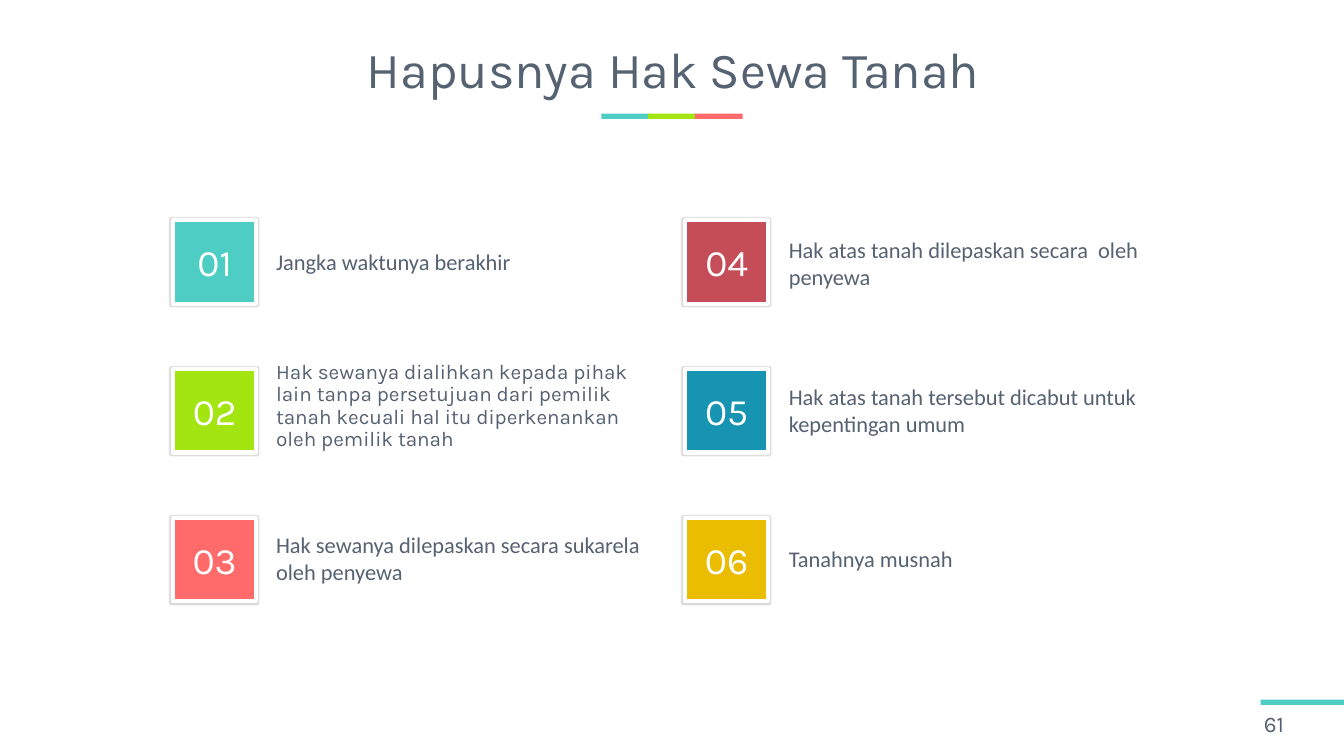
from lxml import etree
from pptx import Presentation
from pptx.dml.color import RGBColor
from pptx.enum import shapes, text
from pptx.oxml import ns
from pptx.util import Inches, Pt

TEAL = RGBColor(0x4E, 0xCD, 0xC4)
LIME = RGBColor(0xA3, 0xE5, 0x11)
CORAL = RGBColor(0xFF, 0x6B, 0x6B)
WINE = RGBColor(0xC5, 0x4D, 0x57)
BLUE = RGBColor(0x16, 0x94, 0xB2)
GOLD = RGBColor(0xEA, 0xBD, 0x00)
SLATE = RGBColor(0x55, 0x62, 0x72)
WHITE = RGBColor(0xFF, 0xFF, 0xFF)

LEFT, CENTER, FULL = text.PP_ALIGN.LEFT, text.PP_ALIGN.CENTER, text.PP_ALIGN.JUSTIFY
TOP, MIDDLE = text.MSO_ANCHOR.TOP, text.MSO_ANCHOR.MIDDLE
SIDE = 1.24
PITCH = 2.215

ITEMS = [
    ("Jangka waktunya berakhir", TEAL, 3.21, 1.37, 0, LEFT),
    ("Hak sewanya dialihkan kepada pihak lain tanpa persetujuan dari pemilik "
     "tanah kecuali hal itu diperkenankan oleh pemilik tanah",
     LIME, 5.33, 1.57, 12, LEFT),
    ("Hak sewanya dilepaskan secara sukarela oleh penyewa", CORAL, 7.5, 1.61, 12, LEFT),
    ("Hak atas tanah dilepaskan secara  oleh penyewa", WINE, 3.07, 1.68, 0, LEFT),
    ("Hak atas tanah tersebut dicabut untuk kepentingan umum",
     BLUE, 5.29, 1.61, 12, LEFT),
    ("Tanahnya musnah", GOLD, 7.5, 1.61, 0, FULL),
]


def write(shape, words, size, color=SLATE, font="Karla", align=LEFT,
          anchor=MIDDLE, line=None, before=0):
    frame = shape.text_frame
    frame.word_wrap = True
    frame.auto_size = text.MSO_AUTO_SIZE.NONE
    frame.vertical_anchor = anchor
    para = frame.paragraphs[0]
    para.alignment = align
    para.space_before = Pt(before)
    if line:
        para.line_spacing = line
    run = para.add_run()
    run.text = words
    run.font.size = Pt(size)
    run.font.name = font
    run.font.color.rgb = color


def add_rect(slide, box, color):
    rect = slide.shapes.add_shape(shapes.MSO_SHAPE.RECTANGLE, *map(Inches, box))
    rect.shadow.inherit = False
    rect.fill.solid()
    rect.fill.fore_color.rgb = color
    rect.line.fill.background()
    return rect


def add_glow(shape):
    effects = shape._element.spPr.find(ns.qn("a:effectLst"))
    glow = etree.SubElement(effects, ns.qn("a:outerShdw"), blurRad="12700",
                            sx="102000", sy="102000", algn="ctr", rotWithShape="0")
    black = etree.SubElement(glow, ns.qn("a:srgbClr"), val="000000")
    etree.SubElement(black, ns.qn("a:alpha"), val="15000")


def add_title(slide, box):
    title = slide.shapes.title
    title.left, title.top, title.width, title.height = map(Inches, box)
    write(title, "Hapusnya Hak Sewa Tanah", 54, align=CENTER, line=0.9)
    for i, color in enumerate((TEAL, LIME, CORAL)):
        add_rect(slide, (8.95 + i * 0.695, 1.69, 0.71, 0.08), color)


def add_tile(slide, left, top, label, color):
    tile = add_rect(slide, (left, top, SIDE, SIDE), color)
    tile.line.color.rgb = WHITE
    tile.line.width = Pt(4.5)
    add_glow(tile)
    box = slide.shapes.add_textbox(*map(Inches, (left + 0.14, top + 0.23, 0.97, 0.77)))
    write(box, label, 40, WHITE, align=CENTER, anchor=TOP)


def add_item(slide, box, words, before, align):
    rect = add_rect(slide, box, WHITE)
    if len(words) > 100:
        write(rect, words, 22.2, anchor=TOP, line=0.9, before=before)
    else:
        write(rect, words, 24, font="Calibri", align=align, before=before)


def add_grid(slide, left, top):
    for i, (words, color, y, height, before, align) in enumerate(ITEMS):
        col, row = divmod(i, 3)
        x = left + col * 7.62
        add_tile(slide, x, top + row * PITCH, f"{i + 1:02}", color)
        add_item(slide, (x + 1.44 + col * 0.01, y, 5.86, height), words, before, align)


def add_footer(slide, left, top):
    add_rect(slide, (left, top, 20 - left, 0.08), TEAL)
    box = slide.shapes.add_textbox(*map(Inches, (left - 0.05, top + 0.09, 1.29, 0.53)))
    write(box, "61", 24)


def main():
    deck = Presentation()
    deck.slide_width, deck.slide_height = Inches(20), Inches(11.25)
    slide = deck.slides.add_slide(deck.slide_layouts[5])
    add_title(slide, (0.54, 0.38, 18.96, 1.4))
    add_grid(slide, 2.57, 3.28)
    add_footer(slide, 18.76, 10.41)
    deck.save("out.pptx")


if __name__ == "__main__":
    main()
